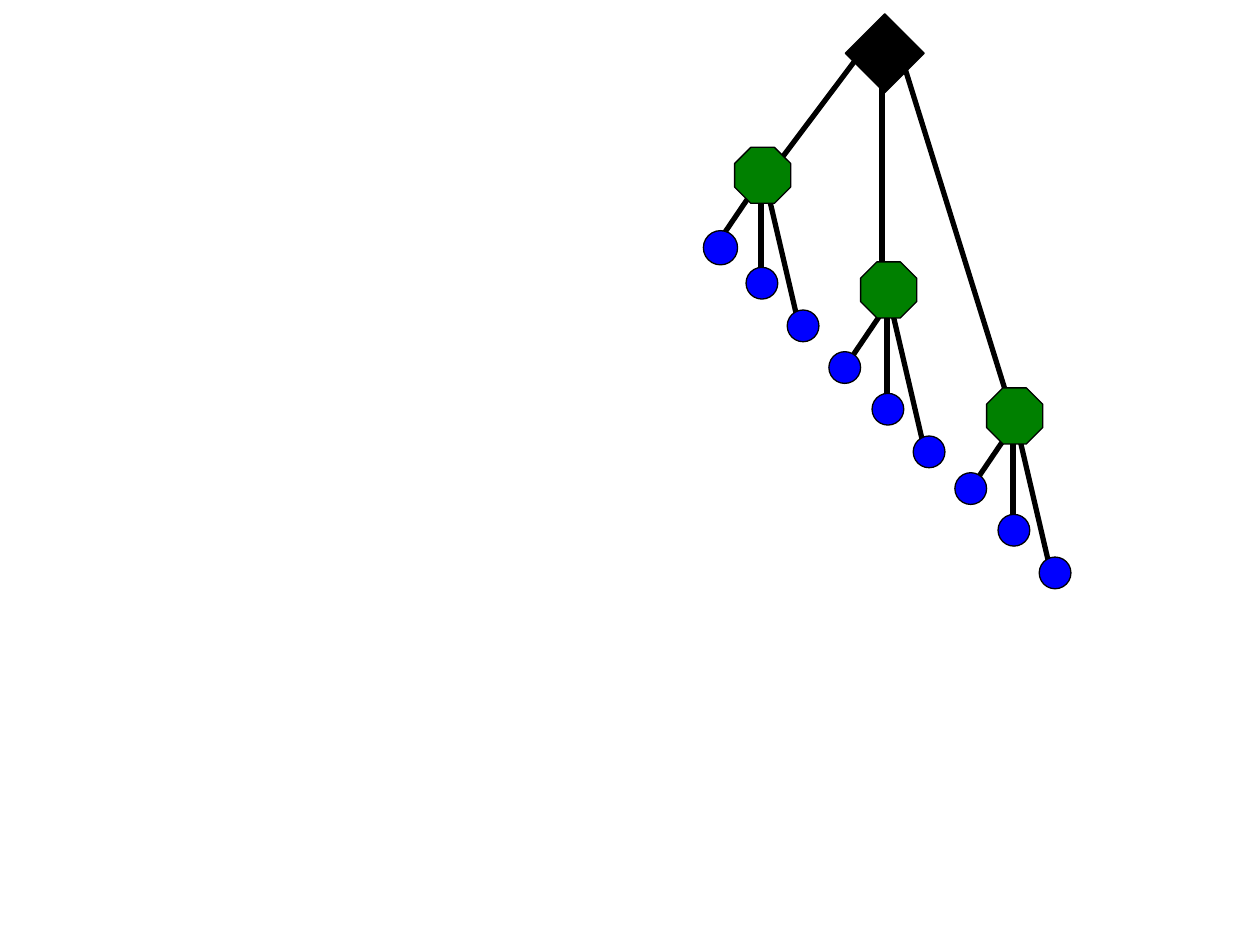
"""Build a slide with a three-level tree: a diamond root, octagon branches and round leaves."""
from lxml import etree
from pptx import Presentation
from pptx.dml.color import RGBColor
from pptx.enum import shapes
from pptx.oxml import ns
from pptx.util import Cm, Pt

SHAPE = shapes.MSO_SHAPE
BLACK, GREEN, BLUE = "000000", "008000", "0000FF"

deck = Presentation()
deck.slide_width, deck.slide_height = Cm(25.4), Cm(19.05)
page = deck.slides.add_slide(deck.slide_layouts[6])


def add_node(kind, left, top, width, height, fill):
    node = page.shapes.add_shape(kind, Cm(left), Cm(top), Cm(width), Cm(height))
    node.shadow.inherit = False
    node.fill.solid()
    node.fill.fore_color.rgb = RGBColor.from_string(fill)
    node.line.color.rgb = RGBColor.from_string(BLACK)
    node.line.width = Pt(0.75)
    return node


def add_edge(x1, y1, x2, y2):
    edge = page.shapes.add_connector(
        shapes.MSO_CONNECTOR.STRAIGHT, Cm(x1), Cm(y1), Cm(x2), Cm(y2))
    edge.line.color.rgb = RGBColor.from_string(BLACK)
    edge.line.width = Pt(3)
    etree.SubElement(edge._element.spPr, ns.qn("a:effectLst"))


branch_step = 2.54
first_hub_x = 15.34
hub_tops = [3.61, 6.15, 8.59]
octagon_tops = [2.97, 5.28, 7.82]
twigs = [(-0.86, 1.27, 0, 0), (0, 0.05, 0, 2.13), (0.1, 0.1, 0.74, 2.84)]
leaves = [(-0.3, 1.78), (0.53, 2.64), (-1.17, 0.94)]

for branch in (2, 1, 0):
    x, y = first_hub_x + branch * branch_step, hub_tops[branch]
    for x1, y1, x2, y2 in twigs:
        add_edge(x + x1, y + y1, x + x2, y + y2)
    for dx, dy in leaves if branch else leaves[:2]:
        add_node(SHAPE.OVAL, x + dx, y + dy, 0.64, 0.64, BLUE)

for trunk in [(15.44, 3.61, 17.35, 1.07), (17.78, 6.15, 17.78, 1.27),
              (20.52, 8.69, 18.21, 1.27)]:
    add_edge(*trunk)

add_node(SHAPE.DIAMOND, 17.04, 0.28, 1.59, 1.59, BLACK)
add_node(SHAPE.FLOWCHART_CONNECTOR, 14.18, 4.65, 0.69, 0.69, BLUE)
for branch, top in enumerate(octagon_tops):
    octagon = add_node(SHAPE.OCTAGON, 14.81 + branch * branch_step, top, 1.13, 1.13, GREEN)
    octagon.adjustments[0] = 0.29

deck.save("out.pptx")
